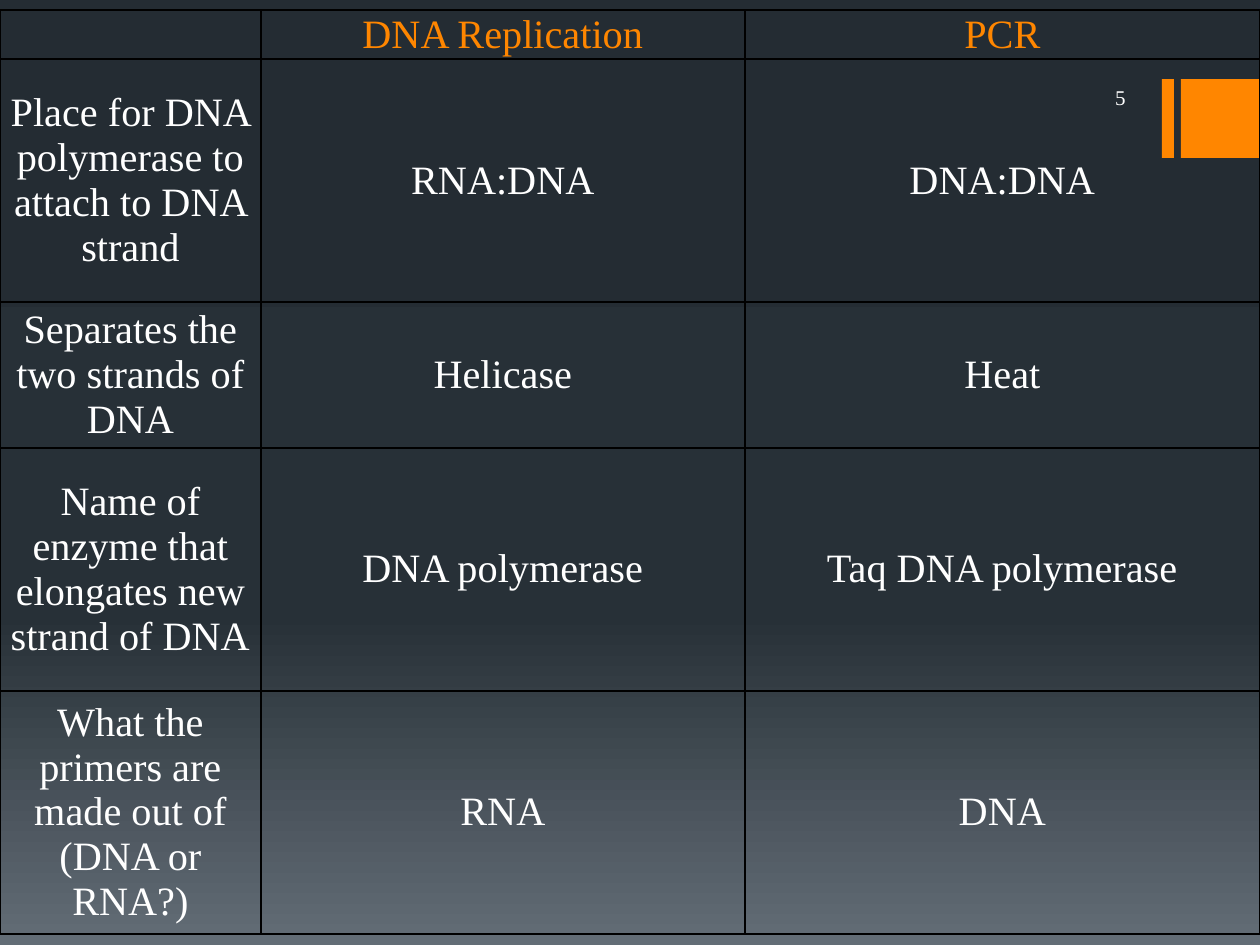
from lxml import etree
from pptx import Presentation
from pptx.dml.color import RGBColor
from pptx.enum.shapes import MSO_SHAPE as SHAPE
from pptx.enum.text import MSO_ANCHOR as ANCHOR, PP_ALIGN as ALIGN
from pptx.oxml.ns import qn
from pptx.util import Pt

PX = 914400 / 126
FONT = "Times New Roman"
COLORS = {
    "bg_top": "242C33",
    "bg_mid": "273037",
    "bg_bottom": "636D76",
    "accent": "FF8600",
    "text": "FFFFFF",
    "border": "000000",
}
ROWS = [
    ["", "DNA Replication", "PCR"],
    ["Place for DNA polymerase to attach to DNA strand", "RNA:DNA", "DNA:DNA"],
    ["Separates the two strands of DNA", "Helicase", "Heat"],
    ["Name of enzyme that elongates new strand of DNA", "DNA polymerase",
     "Taq DNA polymerase"],
    ["What the primers are made out of (DNA or RNA?)", "RNA", "DNA"],
]
COL_WIDTHS = [261, 484, 515]
ROW_HEIGHTS = [49, 243, 146, 243, 243]


def px(n):
    return round(n * PX)


def rgb(name):
    return RGBColor.from_string(COLORS[name])


def add_color(parent, name):
    fill = etree.SubElement(parent, qn("a:solidFill"))
    etree.SubElement(fill, qn("a:srgbClr"), val=COLORS[name])


def add_text(tf, text, size, color, align):
    tf.vertical_anchor = ANCHOR.MIDDLE
    tf.word_wrap = True
    p = tf.paragraphs[0]
    p.alignment = align
    r = p.add_run()
    r.text = text
    r.font.name, r.font.size = FONT, Pt(size)
    r.font.color.rgb = rgb(color)


def set_background(s):
    fill = s.background.fill
    fill.gradient()
    fill.gradient_angle = 270
    # Replace the default stops with three of our own
    stops = next(s.element.iter(qn("a:gsLst")))
    for stop in list(stops):
        stops.remove(stop)
    for pos, name in ((0, "bg_top"), (65, "bg_mid"), (100, "bg_bottom")):
        gs = etree.SubElement(stops, qn("a:gs"), pos=str(pos * 1000))
        etree.SubElement(gs, qn("a:srgbClr"), val=COLORS[name])


def add_page_marker(s, x, y, number):
    # Narrow bar and square at the right edge
    for dx, width in ((147, 12), (166, 79)):
        sp = s.shapes.add_shape(SHAPE.RECTANGLE, px(x + dx), px(y + 3),
                                px(width), px(79))
        sp.shadow.inherit = False
        sp.fill.solid()
        sp.fill.fore_color.rgb = rgb("accent")
        sp.line.fill.background()
    # Page number
    tf = s.shapes.add_textbox(px(x - 7), px(y), px(130), px(42)).text_frame
    add_text(tf, number, 12, "text", ALIGN.RIGHT)


def style_cell(cell):
    cell.margin_left = cell.margin_right = px(9)
    cell.margin_top = cell.margin_bottom = 0
    cell.vertical_anchor = ANCHOR.MIDDLE
    tc_pr = cell._tc.get_or_add_tcPr()
    for side in ("lnL", "lnR", "lnT", "lnB"):
        line = etree.SubElement(tc_pr, qn(f"a:{side}"), w=str(Pt(1)))
        add_color(line, "border")
    cell.fill.background()


def add_comparison_table(s, x, y):
    table = s.shapes.add_table(len(ROWS), len(COL_WIDTHS), px(x), px(y),
                               px(sum(COL_WIDTHS)), px(sum(ROW_HEIGHTS))).table
    table.first_row = table.horz_banding = False
    for col, width in zip(table.columns, COL_WIDTHS):
        col.width = px(width)
    for i, (row, height) in enumerate(zip(table.rows, ROW_HEIGHTS)):
        row.height = px(height)
        for cell, text in zip(row.cells, ROWS[i]):
            style_cell(cell)
            if text:
                p = cell.text_frame.paragraphs[0]
                p.alignment = ALIGN.CENTER
                r = p.add_run()
                r.text = text
                r.font.name, r.font.size = FONT, Pt(23)
                r.font.color.rgb = rgb("text" if i else "accent")


def main():
    prs = Presentation()
    prs.slide_width, prs.slide_height = px(1260), px(945)
    s = prs.slides.add_slide(prs.slide_layouts[6])
    set_background(s)
    add_page_marker(s, 1015, 76, "5")
    add_comparison_table(s, 0, 10)
    prs.save("out.pptx")


if __name__ == "__main__":
    main()
